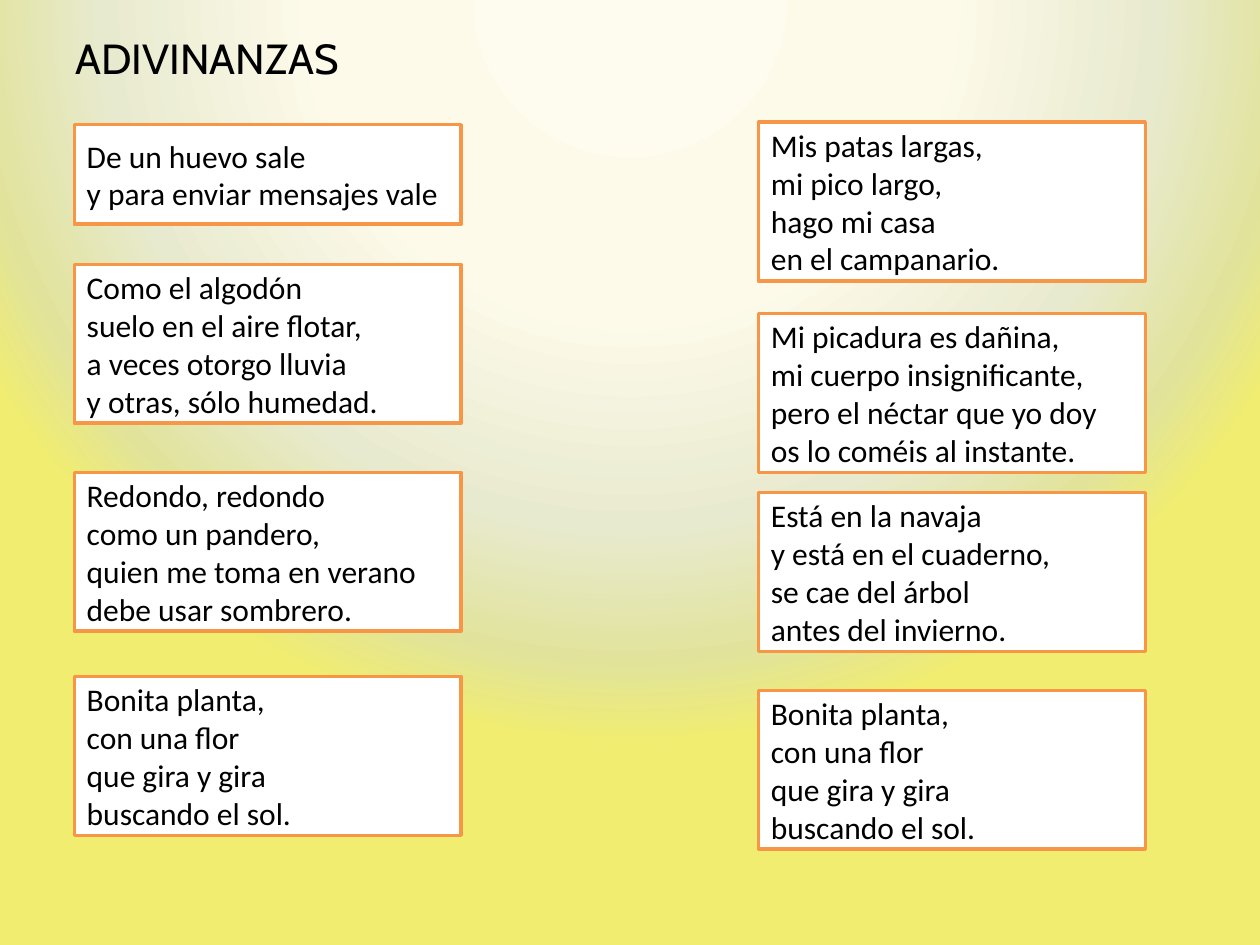
from dataclasses import dataclass

from lxml import etree
from pptx import Presentation
from pptx.dml.color import RGBColor
from pptx.enum.shapes import MSO_SHAPE as Shape
from pptx.enum.text import MSO_ANCHOR as Anchor, PP_ALIGN as Align
from pptx.oxml.ns import qn
from pptx.util import Inches, Pt


@dataclass(frozen=True)
class Theme:
    ink: str = "000000"
    paper: str = "FFFFFF"
    border: str = "F79646"
    border_width: float = 2
    title_font: str = "Cabin"
    title_size: int = 24
    verse_font: str = "Calibri"
    verse_size: int = 18
    # Position, colour and opacity, all positions and opacities in percent
    glow: tuple = ((0, "FEFCEE", 100), (40, "FDFAEA", 100), (67, "E8EACF", 100),
                   (84, "E1E39B", 100), (94, "F0ED72", 93), (100, "F0ED70", 100))


class RiddleSlide:
    """Places elements by percent of the slide's width and height."""

    def __init__(self, deck, theme):
        self.deck = deck
        self.theme = theme
        self.page = deck.slides.add_slide(deck.slide_layouts[6])

    def area(self, left, top, width, height):
        across, down = self.deck.slide_width / 100, self.deck.slide_height / 100
        return [int(n) for n in (left * across, top * down, width * across, height * down)]

    def background(self):
        self.page.background.fill.gradient()
        gradient = self.page.element.find(".//" + qn("a:gradFill"))
        for child in list(gradient):
            gradient.remove(child)
        stops = etree.SubElement(gradient, qn("a:gsLst"))
        for position, color, opacity in self.theme.glow:
            stop = etree.SubElement(stops, qn("a:gs"), pos=str(position * 1000))
            tint = etree.SubElement(stop, qn("a:srgbClr"), val=color)
            if opacity < 100:
                etree.SubElement(tint, qn("a:alpha"), val=str(opacity * 1000))
        circle = etree.SubElement(gradient, qn("a:path"))
        circle.set("path", "circle")
        etree.SubElement(circle, qn("a:fillToRect"),
                         l="50000", t="-80000", r="50000", b="180000")

    def set_text(self, frame, text, font, size):
        frame.word_wrap = True
        frame.text = text
        for para in frame.paragraphs:
            para.alignment = Align.LEFT
            for span in para.runs:
                span.font.name = font
                span.font.size = Pt(size)
                span.font.color.rgb = RGBColor.from_string(self.theme.ink)

    def title(self, text, *place):
        box = self.page.shapes.add_textbox(*self.area(*place))
        self.set_text(box.text_frame, text, self.theme.title_font, self.theme.title_size)
        box.text_frame.paragraphs[0].space_before = Pt(self.theme.title_size * 0.2)

    def riddle(self, lines, separator, *place):
        box = self.page.shapes.add_shape(Shape.RECTANGLE, *self.area(*place))
        box.shadow.inherit = False
        box.fill.solid()
        box.fill.fore_color.rgb = RGBColor.from_string(self.theme.paper)
        box.line.color.rgb = RGBColor.from_string(self.theme.border)
        box.line.width = Pt(self.theme.border_width)
        box.text_frame.vertical_anchor = Anchor.MIDDLE
        self.set_text(box.text_frame, separator.join(lines),
                      self.theme.verse_font, self.theme.verse_size)


PARAGRAPH, LINE_BREAK = "\n", "\v"
LEFT, RIGHT, WIDTH = 5.9, 60.2, 30.7
SHORT, TALL = 10.53, 16.8

SUNFLOWER = ("Bonita planta,", "con una flor", "que gira y gira", "buscando el sol.")

# Column, top, height, separator, lines
RIDDLES = (
    (LEFT, 13.2, SHORT, PARAGRAPH,
     ("De un huevo sale", "y para enviar mensajes vale")),
    (LEFT, 28, TALL, LINE_BREAK,
     ("Como el algodón", "suelo en el aire flotar,",
      "a veces otorgo lluvia", "y otras, sólo humedad.")),
    (LEFT, 50, TALL, LINE_BREAK,
     ("Redondo, redondo", "como un pandero,",
      "quien me toma en verano", "debe usar sombrero.")),
    (LEFT, 71.6, TALL, LINE_BREAK, SUNFLOWER),
    (RIGHT, 12.93, TALL, PARAGRAPH,
     ("Mis patas largas,", "mi pico largo,", "hago mi casa", "en el campanario.")),
    (RIGHT, 33.2, TALL, LINE_BREAK,
     ("Mi picadura es dañina,", "mi cuerpo insignificante,",
      "pero el néctar que yo doy", "os lo coméis al instante.")),
    (RIGHT, 52.13, TALL, LINE_BREAK,
     ("Está en la navaja", "y está en el cuaderno,",
      "se cae del árbol", "antes del invierno.")),
    (RIGHT, 73.07, TALL, LINE_BREAK, SUNFLOWER),
)


def main():
    deck = Presentation()
    deck.slide_width, deck.slide_height = Inches(10), Inches(7.5)
    slide = RiddleSlide(deck, Theme())

    # Backdrop and heading
    slide.background()
    slide.title("ADIVINANZAS", 5, 2.8, 90, 86.53)

    # Two columns of riddles
    for left, top, height, separator, lines in RIDDLES:
        slide.riddle(lines, separator, left, top, WIDTH, height)

    deck.save("out.pptx")


if __name__ == "__main__":
    main()
